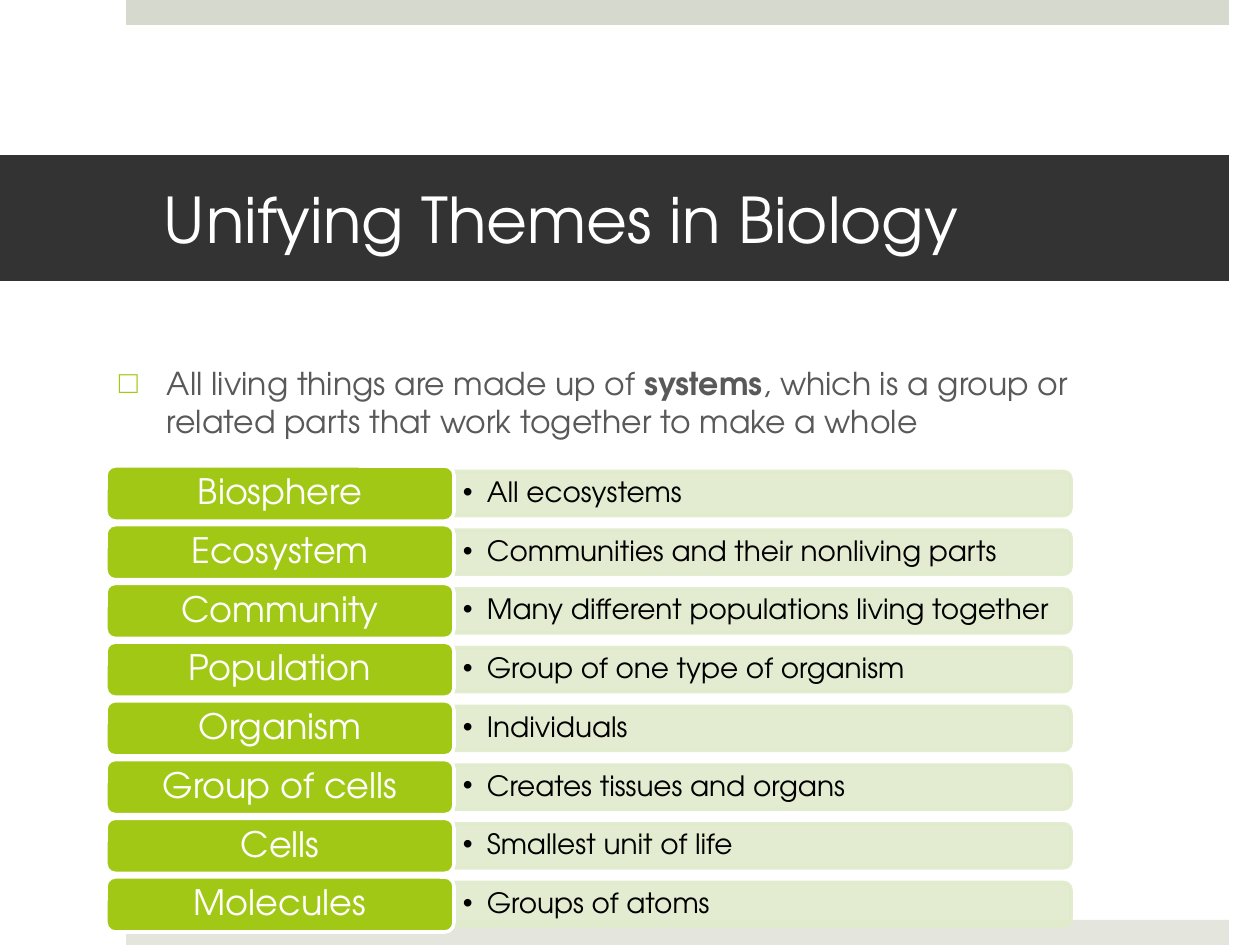
from pptx import Presentation
from pptx.dml.color import RGBColor
from pptx.enum.shapes import MSO_SHAPE as SHAPE
from pptx.enum.text import MSO_ANCHOR as ANCHOR, MSO_AUTO_SIZE as AUTO, PP_ALIGN as ALIGN
from pptx.oxml.ns import qn
from pptx.util import Pt
from lxml.etree import SubElement

FONT = "TeX Gyre Adventor"
PX = 914400 / 126

WHITE = RGBColor(0xFF, 0xFF, 0xFF)
BLACK = RGBColor(0x00, 0x00, 0x00)
CHARCOAL = RGBColor(0x33, 0x33, 0x33)
GREY = RGBColor(0x59, 0x59, 0x59)
LIME = RGBColor(0xA2, 0xC8, 0x16)
PALE_LIME = RGBColor(0xE0, 0xEB, 0xCC)
SAGE = RGBColor(0xD6, 0xD9, 0xCD)
PALE_SAGE = RGBColor(0xE4, 0xE6, 0xDE)

LEVELS = [
    ("Biosphere", "All ecosystems"),
    ("Ecosystem", "Communities and their nonliving parts"),
    ("Community", "Many different populations living together"),
    ("Population", "Group of one type of organism"),
    ("Organism", "Individuals"),
    ("Group of cells", "Creates tissues and organs"),
    ("Cells", "Smallest unit of life"),
    ("Molecules", "Groups of atoms"),
]


def px(length):
    return round(length * PX)


def place(*box):
    return [px(length) for length in box]


def set_bullet(paragraph, char, indent, color=None):
    props = paragraph._p.get_or_add_pPr()
    props.set("marL", str(px(indent)))
    props.set("indent", str(-px(indent)))
    if color is not None:
        bullet_color = SubElement(props, qn("a:buClr"))
        SubElement(bullet_color, qn("a:srgbClr"), val=str(color))
    SubElement(props, qn("a:buFont"), typeface="Arial")
    SubElement(props, qn("a:buChar"), char=char)


def write(shape, *parts, size, color, bold_part=None, align=ALIGN.LEFT,
          anchor=ANCHOR.MIDDLE, insets=(13, 6, 13, 6), line_spacing=None,
          before=None, after=None, bullet=None):
    frame = shape.text_frame
    frame.word_wrap = True
    frame.auto_size = AUTO.NONE
    frame.vertical_anchor = anchor
    (frame.margin_left, frame.margin_top,
     frame.margin_right, frame.margin_bottom) = place(*insets)
    paragraph = frame.paragraphs[0]
    paragraph.alignment = align
    if line_spacing:
        paragraph.line_spacing = line_spacing
    if before:
        paragraph.space_before = Pt(before)
    if after:
        paragraph.space_after = Pt(after)
    if bullet:
        set_bullet(paragraph, *bullet)
    for part in parts:
        run = paragraph.add_run()
        run.text = part
        run.font.name = FONT
        run.font.size = Pt(size)
        run.font.bold = part == bold_part
        run.font.color.rgb = color


def add_block(slide, kind, box, fill, line=None):
    block = slide.shapes.add_shape(kind, *place(*box))
    block.shadow.inherit = False
    block.fill.solid()
    block.fill.fore_color.rgb = fill
    if line is None:
        block.line.fill.background()
    else:
        block.line.color.rgb = line
        block.line.width = Pt(2)
    return block


def add_title(slide, box):
    title = slide.shapes.title
    title.left, title.top, title.width, title.height = place(*box)
    title.fill.solid()
    title.fill.fore_color.rgb = CHARCOAL
    write(title, "Unifying Themes in Biology", size=36, color=WHITE,
          insets=(164, 6, 38, 6))


def add_statement(slide, box):
    statement = slide.shapes.add_textbox(*place(*box))
    write(statement, "All living things are made up of ", "systems",
          ", which is a group or related parts that work together to make a whole",
          size=18, color=GREY, bold_part="systems", anchor=ANCHOR.TOP,
          before=20, bullet=("□", 48, LIME))


def add_level(slide, box, name, meaning):
    left, top, width, height = box
    name_w, panel_h = 348, 44
    panel_left, panel_w = left + name_w, width - name_w
    middle = top + height / 2

    # Panel: an upright shape turned so its round corners face right
    panel = add_block(slide, SHAPE.ROUND_2_SAME_RECTANGLE,
                      (panel_left + (panel_w - panel_h) / 2, middle - panel_w / 2,
                       panel_h, panel_w), PALE_LIME, PALE_LIME)
    panel.rotation = 90
    for color in panel._element.spPr.iter(qn("a:srgbClr")):
        SubElement(color, qn("a:alpha"), val="90000")

    # Meaning stays level, so it has its own box over the panel
    caption = slide.shapes.add_textbox(
        *place(panel_left, middle - 20, panel_w - 2, 40))
    write(caption, meaning, size=16, color=BLACK, insets=(9, 4, 9, 4),
          line_spacing=0.9, after=2, bullet=("•", 24))

    label = add_block(slide, SHAPE.ROUNDED_RECTANGLE,
                      (left, top, name_w, height), LIME, WHITE)
    write(label, name, size=20, color=WHITE, align=ALIGN.CENTER,
          insets=(12, 7, 12, 7), line_spacing=0.9, after=7)


def add_levels(slide, box):
    left, top, width, height = box
    row_h = 55
    step = (height - row_h) / (len(LEVELS) - 1)
    for row, (name, meaning) in enumerate(LEVELS):
        add_level(slide, (left, top + row * step, width, row_h), name, meaning)


def main():
    deck = Presentation()
    deck.slide_width, deck.slide_height = place(1260, 945)
    slide = deck.slides.add_slide(deck.slide_layouts[5])

    # Edge bars
    for top, color in ((0, SAGE), (920, PALE_SAGE)):
        add_block(slide, SHAPE.RECTANGLE, (126, top, 1103, 25), color)

    add_title(slide, (0, 155, 1229, 126))
    add_statement(slide, (106, 358, 1048, 108))
    add_levels(slide, (106, 466, 965, 466))
    deck.save("out.pptx")


if __name__ == "__main__":
    main()
